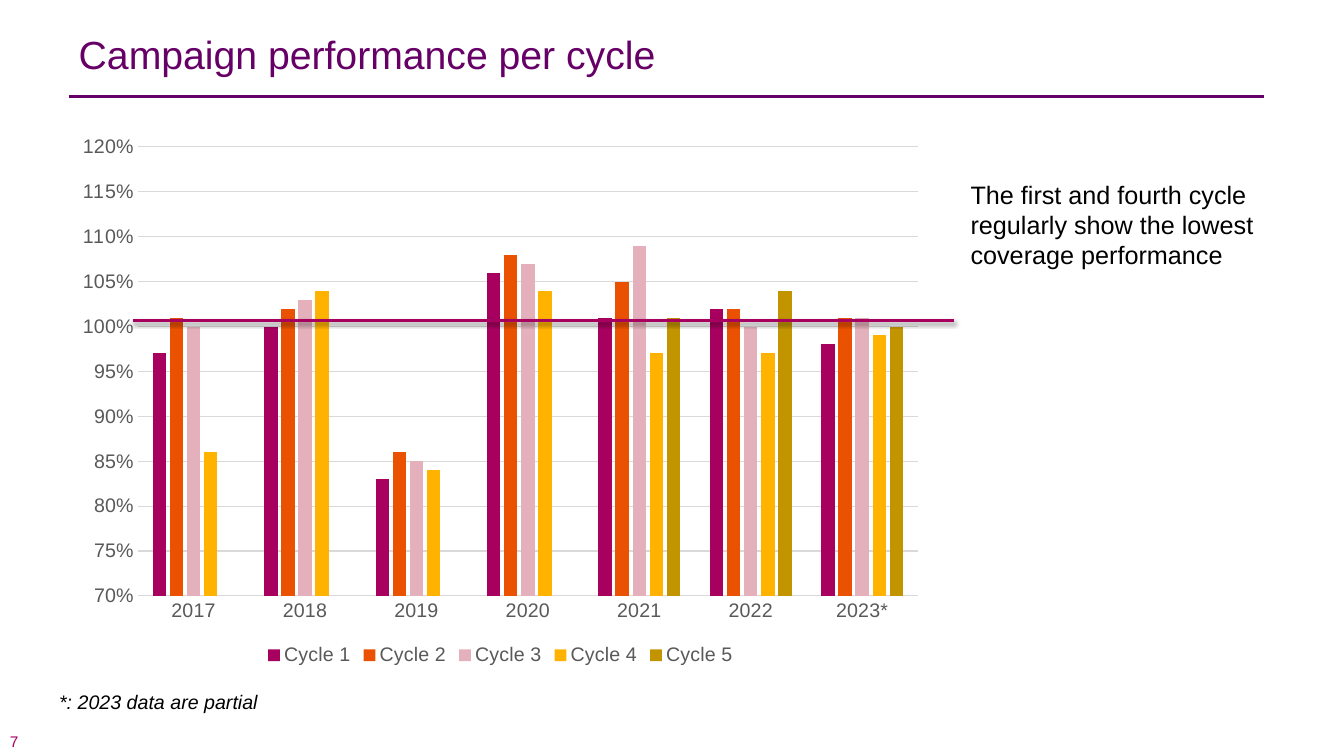
from dataclasses import dataclass

from lxml import etree
from pptx import Presentation
from pptx.chart.data import CategoryChartData
from pptx.dml.color import RGBColor
from pptx.enum.chart import XL_CHART_TYPE as ChartType
from pptx.enum.chart import XL_LEGEND_POSITION as LegendPosition
from pptx.enum.chart import XL_TICK_MARK as TickMark
from pptx.enum.shapes import MSO_CONNECTOR as ConnectorType
from pptx.enum.text import MSO_ANCHOR as Anchor
from pptx.enum.text import MSO_AUTO_SIZE as AutoSize
from pptx.enum.text import PP_ALIGN as Align
from pptx.oxml.ns import qn
from pptx.util import Cm, Pt

FONT = "Arial"
COLORS = {
    "purple": "660066",
    "magenta": "A7005F",
    "orange": "EA5100",
    "pink": "E4B0BB",
    "amber": "FFB300",
    "ochre": "C19400",
    "black": "000000",
    "label": "595959",
    "grid": "D9D9D9",
}
YEARS = ["2017", "2018", "2019", "2020", "2021", "2022", "2023*"]


@dataclass(frozen=True)
class Label:
    text: str
    left: float
    top: float
    width: float
    height: float
    size: float
    color: str = "black"
    italic: bool = False
    anchor: Anchor = Anchor.TOP


@dataclass(frozen=True)
class Rule:
    left: float
    right: float
    y: float
    color: str
    shadow: bool = False


@dataclass(frozen=True)
class Cycle:
    name: str
    color: str
    coverage: tuple


TITLE = Label("Campaign performance per cycle", 1.73, 0.91, 30.15, 1.9, 28, "purple")
PAGE_NUMBER = Label("7", 0, 18.44, 2.69, 0.46, 11, "magenta", anchor=Anchor.MIDDLE)
FINDING = Label("The first and fourth cycle regularly show the lowest coverage performance",
                24.21, 4.39, 8.03, 2.57, 18)
FOOTNOTE = Label("*: 2023 data are partial", 1.24, 17.27, 6.3, 0.86, 14, italic=True)
TITLE_RULE = Rule(1.75, 31.85, 2.44, "purple")
TARGET_LINE = Rule(3.35, 24.05, 8.08, "magenta", shadow=True)

CYCLES = [
    Cycle("Cycle 1", "magenta", (0.97, 1, 0.83, 1.06, 1.01, 1.02, 0.98)),
    Cycle("Cycle 2", "orange", (1.01, 1.02, 0.86, 1.08, 1.05, 1.02, 1.01)),
    Cycle("Cycle 3", "pink", (1, 1.03, 0.85, 1.07, 1.09, 1, 1.01)),
    Cycle("Cycle 4", "amber", (0.86, 1.04, 0.84, 1.04, 0.97, 0.97, 0.99)),
    Cycle("Cycle 5", "ochre", (None, None, None, None, 1.01, 1.04, 1)),
]


def rgb(name: str) -> RGBColor:
    return RGBColor.from_string(COLORS[name])


def style_font(font, size: float, color: str, italic: bool = False) -> None:
    font.name = FONT
    font.size = Pt(size)
    font.italic = italic
    font.color.rgb = rgb(color)


def fill_text(shape, label: Label) -> None:
    shape.left, shape.top = Cm(label.left), Cm(label.top)
    shape.width, shape.height = Cm(label.width), Cm(label.height)
    text_frame = shape.text_frame
    text_frame.text = label.text
    text_frame.word_wrap = True
    text_frame.auto_size = AutoSize.NONE
    text_frame.vertical_anchor = label.anchor
    paragraph = text_frame.paragraphs[0]
    paragraph.alignment = Align.LEFT
    style_font(paragraph.runs[0].font, label.size, label.color, label.italic)


def add_label(slide, label: Label) -> None:
    fill_text(slide.shapes.add_textbox(0, 0, 0, 0), label)


def add_rule(slide, rule: Rule) -> None:
    connector = slide.shapes.add_connector(
        ConnectorType.STRAIGHT, Cm(rule.left), Cm(rule.y), Cm(rule.right), Cm(rule.y))
    connector.line.color.rgb = rgb(rule.color)
    connector.line.width = Pt(2)
    effects = etree.SubElement(connector._element.spPr, qn("a:effectLst"))
    if rule.shadow:
        shadow = etree.SubElement(
            effects, qn("a:outerShdw"), blurRad=str(Pt(3.1)), dist=str(Pt(1.6)),
            dir="5400000", rotWithShape="0")
        color = etree.SubElement(shadow, qn("a:srgbClr"), val=COLORS["black"])
        etree.SubElement(color, qn("a:alpha"), val="38000")


def add_coverage_chart(slide) -> None:
    data = CategoryChartData(number_format="0%")
    data.categories = YEARS
    for cycle in CYCLES:
        data.add_series(cycle.name, cycle.coverage)
    chart = slide.shapes.add_chart(
        ChartType.COLUMN_CLUSTERED, Cm(1.65), Cm(3.15), Cm(21.92), Cm(13.74), data).chart
    chart.has_title = False
    style_font(chart.font, 10, "black")

    # Columns
    plot = chart.plots[0]
    plot.gap_width, plot.overlap = 219, -27
    plot.vary_by_categories = False
    for series, cycle in zip(plot.series, CYCLES):
        series.format.fill.solid()
        series.format.fill.fore_color.rgb = rgb(cycle.color)

    # Axes and gridlines
    years, coverage = chart.category_axis, chart.value_axis
    for axis in (years, coverage):
        axis.major_tick_mark = axis.minor_tick_mark = TickMark.NONE
        style_font(axis.tick_labels.font, 14, "label")
    coverage.minimum_scale, coverage.maximum_scale = 0.7, 1.2
    coverage.major_unit = 0.05
    coverage.tick_labels.number_format = "0%"
    coverage.tick_labels.number_format_is_linked = False
    coverage.format.line.fill.background()
    for line in (years.format.line, coverage.major_gridlines.format.line):
        line.color.rgb = rgb("grid")
        line.width = Pt(0.75)

    # Legend
    chart.has_legend = True
    chart.legend.position = LegendPosition.BOTTOM
    chart.legend.include_in_layout = False
    style_font(chart.legend.font, 14, "label")


def main() -> None:
    presentation = Presentation()
    presentation.slide_width, presentation.slide_height = Cm(33.87), Cm(19.05)
    slide = presentation.slides.add_slide(presentation.slide_layouts.get_by_name("Title Only"))

    # Page number and title
    add_label(slide, PAGE_NUMBER)
    title = slide.shapes.title
    fill_text(title, TITLE)
    title.text_frame.paragraphs[0].line_spacing = Pt(26)
    add_rule(slide, TITLE_RULE)

    # Finding, chart and footnote
    add_label(slide, FINDING)
    add_coverage_chart(slide)
    add_label(slide, FOOTNOTE)

    # Target line across the chart
    add_rule(slide, TARGET_LINE)

    presentation.save("out.pptx")


if __name__ == "__main__":
    main()
